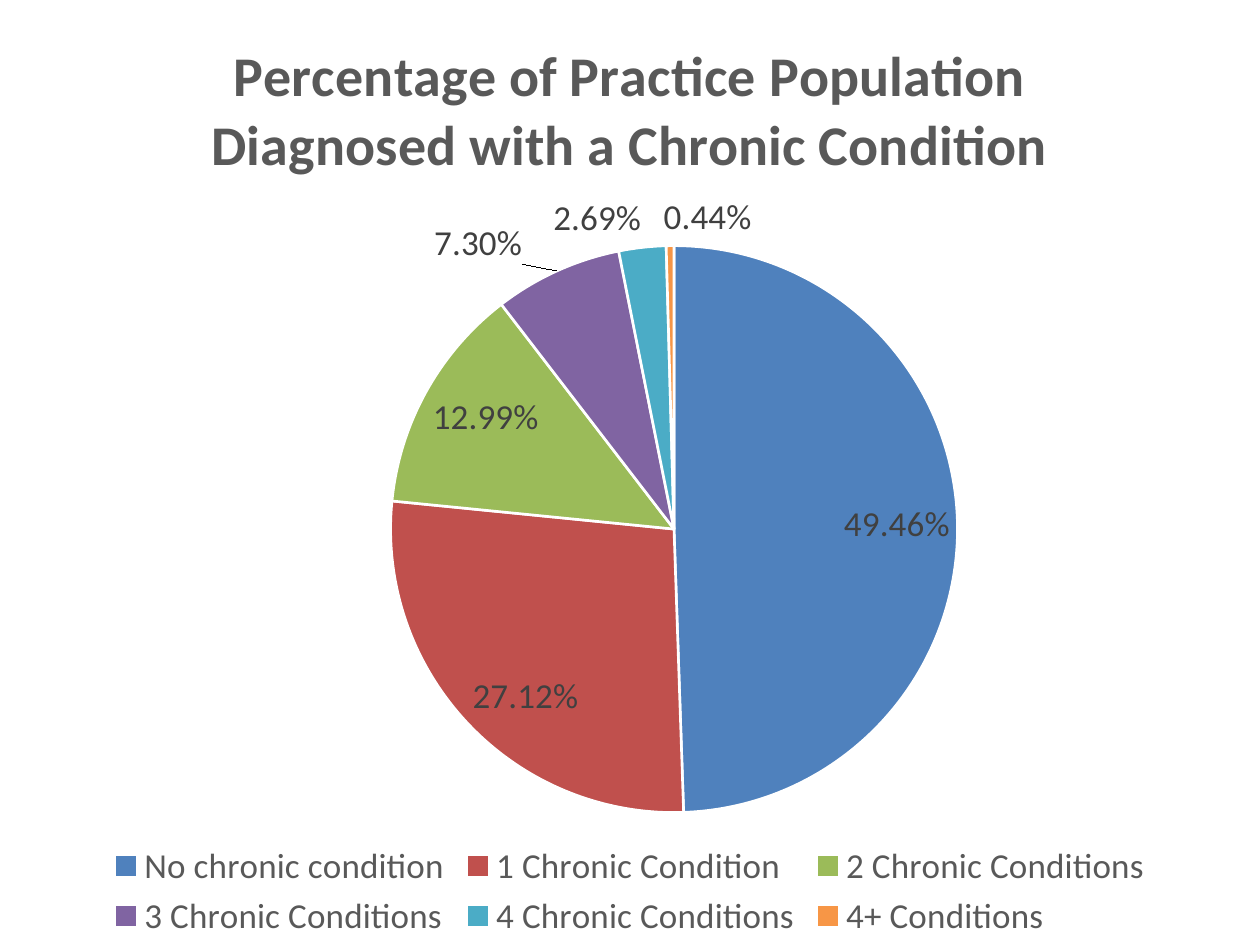
"""Build a slide with a pie chart of chronic conditions in a practice population."""
import pptx
import pptx.chart.data
import pptx.dml.color
import pptx.enum.chart
import pptx.oxml
import pptx.oxml.ns
import pptx.util

COLORS = {
    "No chronic condition": "4F81BD",
    "1 Chronic Condition": "C0504D",
    "2 Chronic Conditions": "9BBB59",
    "3 Chronic Conditions": "8064A2",
    "4 Chronic Conditions": "4BACC6",
    "4+ Conditions": "F79646",
    "heading": "595959",
    "label": "404040",
    "border": "FFFFFF",
}
Position = pptx.enum.chart.XL_LABEL_POSITION
SHARES = [
    ("No chronic condition", 0.4946, Position.INSIDE_END, 0),
    ("1 Chronic Condition", 0.2712, Position.INSIDE_END, 0),
    ("2 Chronic Conditions", 0.1299, Position.INSIDE_END, 0),
    ("3 Chronic Conditions", 0.073, Position.OUTSIDE_END, -0.025),
    ("4 Chronic Conditions", 0.0269, Position.OUTSIDE_END, 0),
    ("4+ Conditions", 0.0044, Position.OUTSIDE_END, 0.03),
]


def style_font(font, size, color, bold=False):
    font.name = "Calibri"
    font.size = pptx.util.Pt(size)
    font.bold = bold
    font.color.rgb = pptx.dml.color.RGBColor.from_string(COLORS[color])


def manual_layout(**settings):
    children = "".join(f'<c:{tag} val="{value}"/>' for tag, value in settings.items())
    return pptx.oxml.parse_xml(
        f'<c:layout {pptx.oxml.ns.nsdecls("c")}><c:manualLayout>{children}</c:manualLayout></c:layout>'
    )


presentation = pptx.Presentation()
presentation.slide_width = pptx.util.Inches(10)
presentation.slide_height = pptx.util.Inches(7.5)
slide = presentation.slides.add_slide(presentation.slide_layouts[6])

population = pptx.chart.data.CategoryChartData(number_format="0.00%")
population.categories = [share[0] for share in SHARES]
population.add_series("Series 1", [share[1] for share in SHARES])
chart = slide.shapes.add_chart(
    pptx.enum.chart.XL_CHART_TYPE.PIE,
    0, 0, presentation.slide_width, presentation.slide_height,
    population,
).chart
chart.font.name = "Calibri"
chart.font.size = pptx.util.Pt(10)

chart.has_title = True
heading = chart.chart_title.text_frame
heading.text = "Percentage of Practice Population Diagnosed with a Chronic Condition"
style_font(heading.paragraphs[0].runs[0].font, 32, "heading", bold=True)
chart.chart_title.include_in_layout = False

chart.has_legend = True
chart.legend.position = pptx.enum.chart.XL_LEGEND_POSITION.BOTTOM
chart.legend.include_in_layout = False
style_font(chart.legend.font, 20, "heading")

plot_area = chart.plots[0]._element.getparent()
for old_layout in plot_area.findall(pptx.oxml.ns.qn("c:layout")):
    plot_area.remove(old_layout)
plot_area.insert(0, manual_layout(
    layoutTarget="inner", xMode="edge", yMode="edge", x=0.31, y=0.26, w=0.45, h=0.6
))

chart.plots[0].vary_by_categories = True
conditions = chart.plots[0].series[0]
labels = conditions.data_labels
labels.show_value = True
labels.number_format = "0.00%"
labels.number_format_is_linked = False
style_font(labels.font, 20, "label")
labels._element.append(pptx.oxml.parse_xml(
    f'<c:showLeaderLines {pptx.oxml.ns.nsdecls("c")} val="1"/>'
))

for index, (condition, share, position, shift) in enumerate(SHARES):
    point = conditions.points[index]
    point.format.fill.solid()
    point.format.fill.fore_color.rgb = pptx.dml.color.RGBColor.from_string(COLORS[condition])
    point.format.line.color.rgb = pptx.dml.color.RGBColor.from_string(COLORS["border"])
    point.format.line.width = pptx.util.Pt(1.5)
    style_font(point.data_label.font, 20, "label")
    point.data_label.position = position
    if shift:
        label = labels._element.findall(pptx.oxml.ns.qn("c:dLbl"))[index]
        label.insert(1, manual_layout(x=shift, y=0))

presentation.save("out.pptx")
